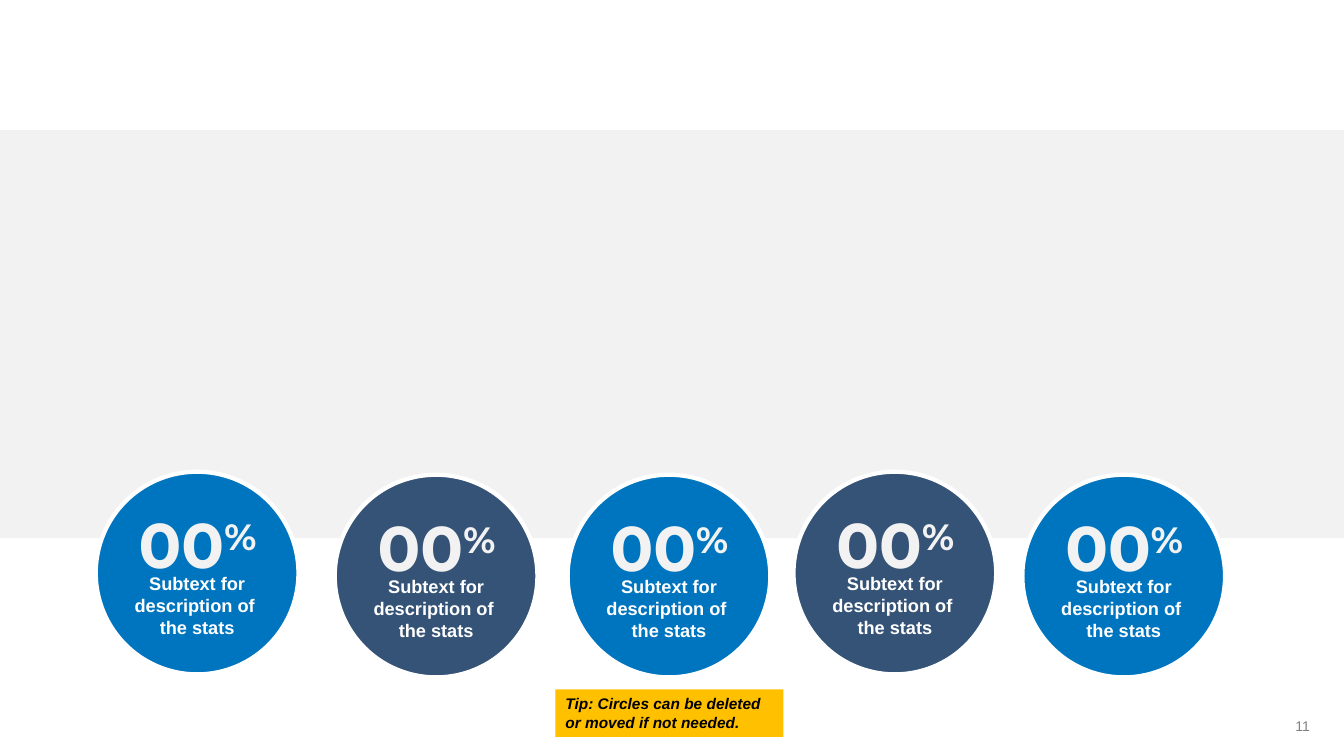
from pptx import Presentation
from pptx.dml.color import RGBColor
from pptx.enum.shapes import MSO_SHAPE
from pptx.enum.text import MSO_ANCHOR, PP_ALIGN
from pptx.util import Pt

SCALE = 9144  # EMU per px, 100 px to the inch
BLUE, NAVY, WHITE, PALE = "0075BF", "355376", "FFFFFF", "F2F2F2"
SIZE = 201
SPOTS = [(95, 468), (332, 471), (563, 471), (787, 468), (1014, 471)]


def color(code):
    return RGBColor.from_string(code)


def emu(*sizes):
    return [size * SCALE for size in sizes]


class Deck:
    body = "Arial"
    display = "Montserrat"

    def __init__(self, width, height):
        self.file = Presentation()
        self.file.slide_width, self.file.slide_height = emu(width, height)
        self.slide = self.file.slides.add_slide(self.file.slide_layouts[6])

    def shape(self, kind, box, fill, line=None):
        shape = self.slide.shapes.add_shape(kind, *emu(*box))
        shape.shadow.inherit = False
        shape.fill.solid()
        shape.fill.fore_color.rgb = color(fill)
        if line:
            shape.line.color.rgb = color(line)
            shape.line.width = Pt(3)
        else:
            shape.line.fill.background()
        return shape

    def label(self, shape, text, size, ink, align=PP_ALIGN.CENTER,
              face=None, bold=True, italic=False, anchor=MSO_ANCHOR.TOP):
        """Set one styled paragraph in the shape and return it."""
        frame = shape.text_frame
        frame.word_wrap = True
        frame.vertical_anchor = anchor
        para = frame.paragraphs[0]
        para.text = text
        para.alignment = align
        font = para.font
        font.name = face or self.body
        font.size = Pt(size)
        font.bold, font.italic = bold, italic
        font.color.rgb = color(ink)
        return para

    def text(self, box, *args, **style):
        return self.label(self.slide.shapes.add_textbox(*emu(*box)),
                          *args, **style)

    def stat(self, left, top, fill):
        """Draw a circle with a percentage and its subtext."""
        self.shape(MSO_SHAPE.OVAL, (left, top, SIZE, SIZE), fill, WHITE)
        para = self.text((left + 26, top + 29, 150, 86), "00", 45, PALE,
                         face=self.display)
        sign = para.add_run()
        sign.text = "%"
        sign._r.get_or_add_rPr().set("baseline", "30000")
        self.text((left + 13, top + 95, 175, 76),
                  "Subtext for description of \nthe stats", 13, WHITE)


def main():
    deck = Deck(1333, 750)
    deck.shape(MSO_SHAPE.RECTANGLE, (0, 129, 1333, 405), PALE)
    deck.text((1009, 705, 300, 30), "11", 10, "808080", PP_ALIGN.RIGHT,
              bold=False, anchor=MSO_ANCHOR.MIDDLE)
    tip = deck.shape(MSO_SHAPE.RECTANGLE, (551, 684, 226, 47), "FFC000")
    deck.label(tip, "Tip: Circles can be deleted or moved if not needed.",
               11, "000000", PP_ALIGN.LEFT, italic=True)
    for i, (left, top) in enumerate(SPOTS):
        deck.stat(left, top, NAVY if i % 2 else BLUE)
    deck.file.save("out.pptx")


if __name__ == "__main__":
    main()
